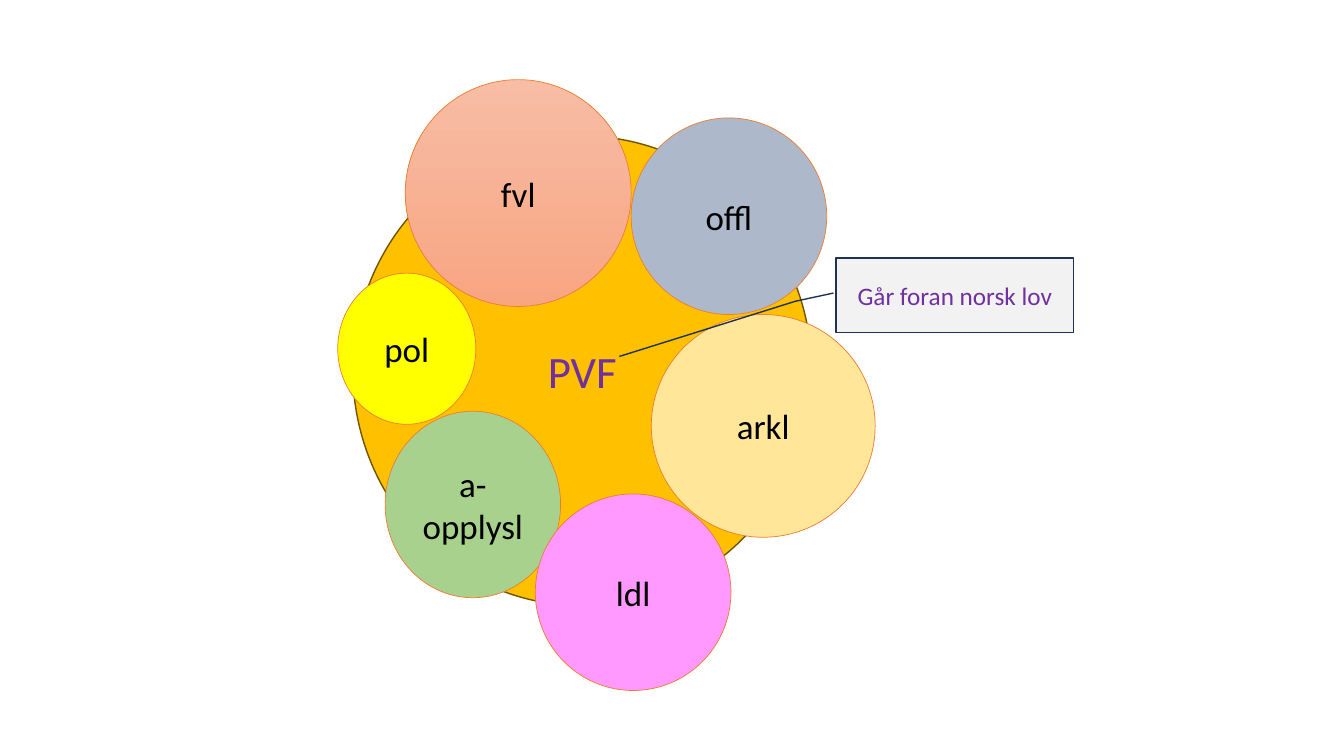
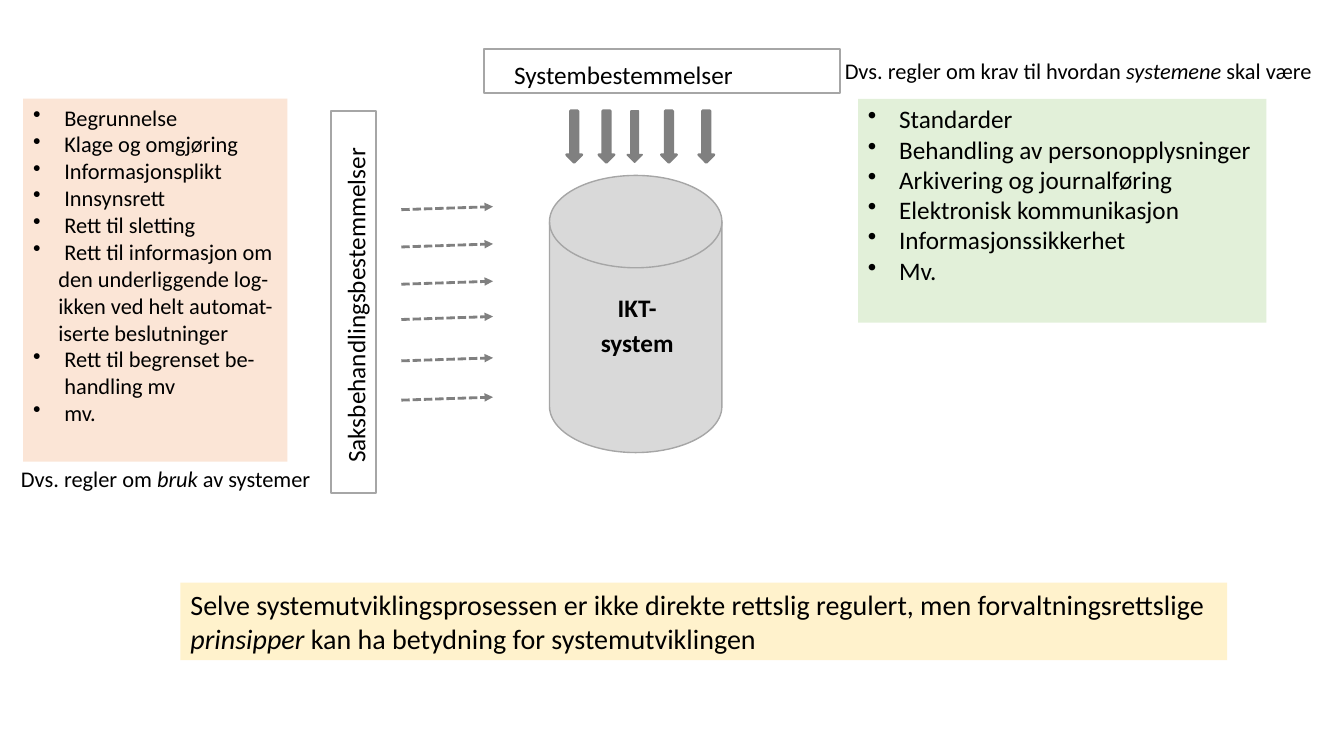
from dataclasses import dataclass, field
from typing import Any, NamedTuple

from lxml import etree
from pptx import Presentation
from pptx.dml.color import RGBColor
from pptx.enum import dml, shapes, text
from pptx.oxml import ns
from pptx.util import Inches, Pt

KIND = shapes.MSO_SHAPE
ALIGN = text.PP_ALIGN
FONT = "Calibri"
BLACK, WHITE, PURPLE = "000000", "FFFFFF", "7030A0"
GREY, EDGE, DISK = "808080", "A6A6A6", "D9D9D9"
GOLD, RIM, ORANGE, NAVY = "FFC000", "705400", "ED7D31", "1E3256"

MID: dict[str, Any] = {"alignment": ALIGN.CENTER}
LABEL: dict[str, Any] = {
    "alignment": ALIGN.JUSTIFY, "line_spacing": 1.15,
    "space_before": Pt(6), "space_after": Pt(10),
}


class Para(NamedTuple):
    text: str
    left: float = 0
    mark: bool = False


def point(words: str) -> Para:
    return Para(words, 0.31, True)


@dataclass
class Box:
    at: tuple[float, float, float, float]
    fill: str | tuple[str, str] = ""
    edge: str = ""
    width: float = 1
    kind: Any = KIND.RECTANGLE
    paras: list[Para] = field(default_factory=list)
    size: float = 18
    ink: str = BLACK
    bold: bool = False
    style: dict[str, Any] = field(default_factory=dict)
    middle: bool = False
    turn: float = 0
    bends: tuple[float, ...] = ()


def assign(item: Any, values: dict[str, Any]) -> None:
    for name, value in values.items():
        setattr(item, name, value)


def shade(fill: Any, code: str) -> None:
    if code:
        fill.solid()
        fill.fore_color.rgb = RGBColor.from_string(code)
    else:
        fill.background()


def blend(fill: Any, codes: tuple[str, str]) -> None:
    fill.gradient()
    fill.gradient_angle = 270
    for stop, code in zip(fill.gradient_stops, codes):
        stop.color.rgb = RGBColor.from_string(code)


def dent(para: Any, left: float, mark: bool) -> None:
    props = para._p.get_or_add_pPr()
    props.set("marL", str(Inches(left)))
    props.set("indent", str(Inches(-left if mark else 0)))
    if mark:
        etree.SubElement(props, ns.qn("a:buChar")).set("char", "•")


def write(frame: Any, box: Box) -> None:
    anchor = text.MSO_ANCHOR.MIDDLE if box.middle else text.MSO_ANCHOR.TOP
    assign(frame, {"word_wrap": True, "vertical_anchor": anchor})
    for place, row in enumerate(box.paras):
        para = frame.add_paragraph() if place else frame.paragraphs[0]
        assign(para, {"alignment": ALIGN.LEFT} | box.style)
        dent(para, row.left, row.mark)
        for turn, part in enumerate(row.text.split("*")):
            if part:
                run = para.add_run()
                run.text = part
                assign(run.font, {"name": FONT, "size": Pt(box.size),
                                  "bold": box.bold, "italic": turn % 2 == 1})
                shade(run.font.fill, box.ink)


def draw(slide: Any, box: Box) -> None:
    shape = slide.shapes.add_shape(box.kind, *map(Inches, box.at))
    assign(shape, {"rotation": box.turn})
    shape.shadow.inherit = False
    for place, bend in enumerate(box.bends):
        shape.adjustments[place] = bend
    if isinstance(box.fill, tuple):
        blend(shape.fill, box.fill)
    else:
        shade(shape.fill, box.fill)
    shade(shape.line.fill, box.edge)
    if box.edge:
        shape.line.width = Pt(box.width)
    write(shape.text_frame, box)


def dart(slide: Any, start: tuple[float, float], end: tuple[float, float]) -> None:
    link = slide.shapes.add_connector(
        shapes.MSO_CONNECTOR.STRAIGHT, *map(Inches, start + end))
    shade(link.line.fill, GREY)
    assign(link.line, {"width": Pt(2), "dash_style": dml.MSO_LINE.SQUARE_DOT})
    props = link._element.spPr
    tail = etree.SubElement(props.find(ns.qn("a:ln")), ns.qn("a:tailEnd"))
    tail.set("type", "triangle")
    etree.SubElement(props, ns.qn("a:effectLst"))


def disc(words: str, at: tuple[float, float, float, float],
         fill: str | tuple[str, str]) -> Box:
    return Box(at, fill, ORANGE, 0.5, KIND.OVAL, [Para(words)], 25,
               style=MID, middle=True)


def label(words: str, at: tuple[float, float, float, float],
          width: float, turn: float = 0) -> Box:
    return Box(at, WHITE, EDGE, width, paras=[Para(words, 0.2)],
               style=LABEL, turn=turn)


def laws(slide: Any) -> None:
    draw(slide, Box((3.5, 1.35, 4.55, 4.66), GOLD, RIM, 1, KIND.OVAL,
                    [Para("PVF")], 32, PURPLE, style=MID, middle=True))
    discs = [
        disc("fvl", (4.02, 0.79, 2.24, 2.25), ("F7BDA5", "F8A582")),
        disc("offl", (6.26, 1.17, 1.94, 1.95), "ADB9CA"),
        disc("arkl", (6.46, 3.12, 2.22, 2.21), "FFE699"),
        disc("a-opplysl", (3.82, 4.08, 1.74, 1.85), "A9D18E"),
        disc("ldl", (5.31, 4.9, 1.94, 1.95), "FF99FF"),
        disc("pol", (3.35, 2.71, 1.37, 1.5), "FFFF00"),
    ]
    for box in discs:
        draw(slide, box)
    draw(slide, Box((8.29, 2.56, 2.36, 0.74), "F2F2F2", NAVY, 1,
                    KIND.LINE_CALLOUT_2, [Para("Går foran norsk lov")],
                    ink=PURPLE, style=MID, middle=True,
                    bends=(0.47, -0.01, 0.58, -0.17, 1.32, -0.91)))


def rules(slide: Any) -> None:
    needs = ["Standarder", "Behandling av personopplysninger",
             "Arkivering og journalføring", "Elektronisk kommunikasjon",
             "Informasjonssikkerhet", "Mv."]
    rights = [
        *map(point, ["Begrunnelse", "Klage og omgjøring", "Informasjonsplikt",
                     "Innsynsrett", "Rett til sletting",
                     "Rett til informasjon om"]),
        Para("den underliggende log-", 0.25),
        Para("ikken ved helt automat-", 0.25),
        Para("iserte beslutninger", 0.25),
        point("Rett til begrenset be-"),
        Para("handling mv", 0.31),
        point("mv."),
    ]
    closing = [
        Para("Selve systemutviklingsprosessen er ikke direkte rettslig regulert, "
             "men forvaltningsrettslige"),
        Para("*prinsipper* kan ha betydning for systemutviklingen"),
    ]
    boxes = [
        label("Systembestemmelser", (4.8, 0.49, 3.53, 0.43), 1.5),
        label("Saksbehandlingsbestemmelser", (1.61, 2.77, 3.79, 0.45), 1.25, 270),
        Box((5.45, 1.74, 1.71, 2.75), DISK, EDGE,
            kind=KIND.FLOWCHART_MAGNETIC_DISK),
        Box((5.53, 2.81, 1.38, 0.8), DISK, paras=[Para("IKT-system", 0.2)],
            bold=True, style=LABEL | MID),
        Box((8.51, 0.98, 4.05, 2.22), "E2F0D9", paras=[*map(point, needs)]),
        Box((1.79, 5.78, 10.38, 0.77), "FFF2CC", paras=closing, size=20),
        Box((0.23, 0.98, 2.62, 3.6), "FBE5D6", paras=rights, size=16),
        Box((0.11, 4.57, 3.12, 0.37), size=16,
            paras=[Para("Dvs. regler om *bruk* av systemer")]),
        Box((8.28, 0.52, 4.91, 0.37), size=16,
            paras=[Para("Dvs. regler om krav til hvordan *systemene* skal være")]),
    ]
    for left, width in [(5.62, 2), (5.94, 2), (6.22, 1), (6.56, 2), (6.93, 2)]:
        boxes.append(Box((left, 1.1, 0.15, 0.51), GREY, GREY, width,
                         KIND.DOWN_ARROW))
    for box in boxes:
        draw(slide, box)
    for top in (2.08, 2.45, 2.82, 3.17, 3.58, 3.97):
        dart(slide, (3.98, top), (4.89, top - 0.03))


def main() -> None:
    deck = Presentation()
    assign(deck, {"slide_width": Inches(13.33), "slide_height": Inches(7.5)})
    for fill in (laws, rules):
        fill(deck.slides.add_slide(deck.slide_layouts[6]))
    deck.save("out.pptx")


if __name__ == "__main__":
    main()
